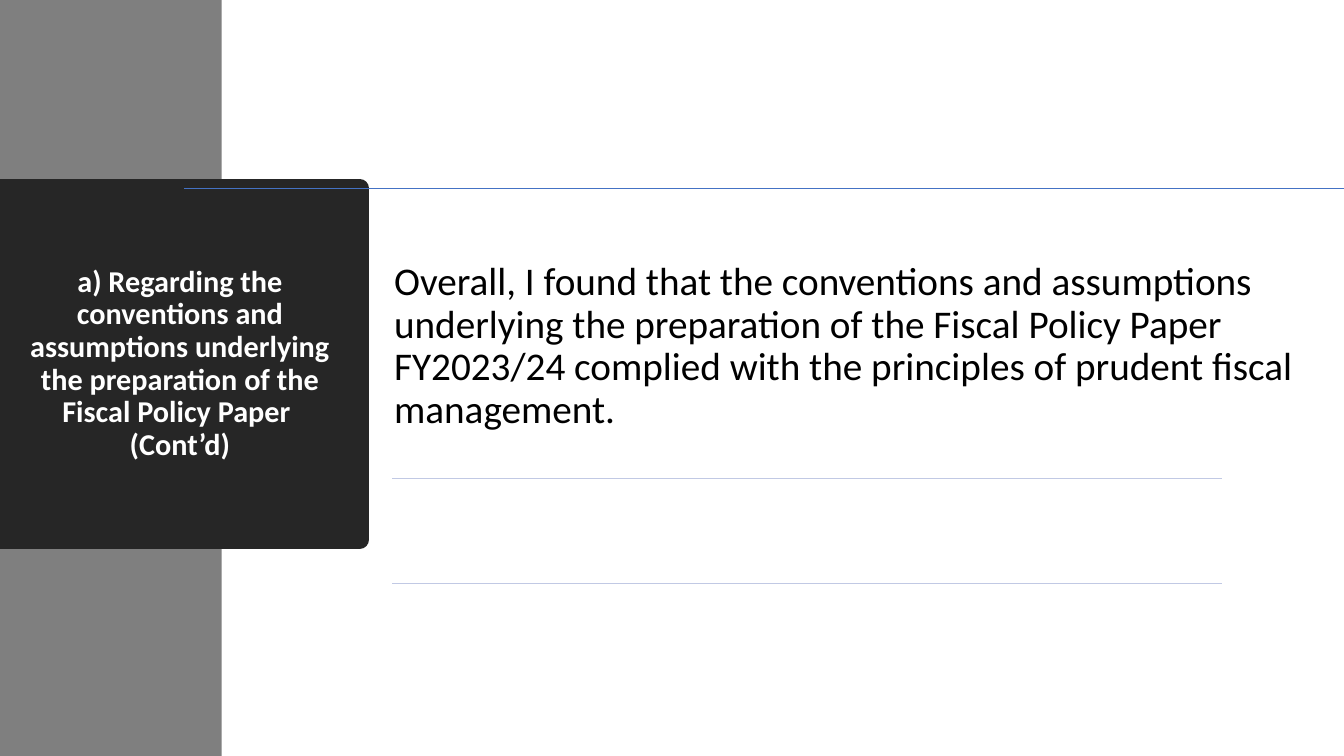
from dataclasses import dataclass

from lxml import etree
from pptx import Presentation
from pptx.dml.color import RGBColor
from pptx.enum.shapes import MSO_CONNECTOR, MSO_SHAPE
from pptx.enum.text import MSO_ANCHOR, PP_ALIGN
from pptx.oxml.ns import qn
from pptx.shapes.autoshape import Shape
from pptx.slide import Slide
from pptx.util import Pt

RECTANGLE = MSO_SHAPE.RECTANGLE
STRAIGHT = MSO_CONNECTOR.STRAIGHT
TOP, MIDDLE = MSO_ANCHOR.TOP, MSO_ANCHOR.MIDDLE
LEFT, CENTER = PP_ALIGN.LEFT, PP_ALIGN.CENTER

PAGE_WIDTH, PAGE_HEIGHT = 960, 540


@dataclass(frozen=True)
class Theme:
    font: str = "Calibri"
    title_size: float = 21.6
    body_size: float = 28
    line_spacing: float = 0.9
    band: str = "7F7F7F"
    panel: str = "262626"
    accent: str = "4472C4"
    pale: str = "C1C9E4"
    title_text: str = "FFFFFF"
    body_text: str = "000000"


@dataclass(frozen=True)
class Area:
    left: float
    top: float
    width: float
    height: float

    def lengths(self) -> tuple[Pt, Pt, Pt, Pt]:
        return Pt(self.left), Pt(self.top), Pt(self.width), Pt(self.height)


@dataclass(frozen=True)
class Rule:
    left: float
    right: float
    height: float
    color: str


@dataclass(frozen=True)
class Passage:
    text: str
    size: float
    color: str
    bold: bool
    align: PP_ALIGN
    anchor: MSO_ANCHOR


THEME = Theme()
BAND = Area(0, 0, 158.4, PAGE_HEIGHT)
PANEL = Area(0, 134.64, 257.04, 250.56)
PANEL_BORDER = 13.75
BODY = Area(272.88, 178.56, 668.16, 200.88)
BODY_INSET = 8.64

RULES = [
    Rule(131.76, PAGE_WIDTH, 134.64, THEME.accent),
    Rule(280.08, 872.64, 342, THEME.pale),
    Rule(280.08, 872.64, 416.88, THEME.pale),
]

TITLE = Passage(
    "a) Regarding the conventions and assumptions underlying "
    "the preparation of the Fiscal Policy Paper \v(Cont’d)",
    THEME.title_size, THEME.title_text, True, CENTER, MIDDLE,
)
FINDING = Passage(
    "Overall, I found that the conventions and assumptions underlying "
    "the preparation of the Fiscal Policy Paper FY2023/24 complied with "
    "the principles of prudent fiscal management.",
    THEME.body_size, THEME.body_text, False, LEFT, TOP,
)


def add_block(page: Slide, area: Area, color: str) -> Shape:
    block = page.shapes.add_shape(RECTANGLE, *area.lengths())
    block.shadow.inherit = False
    block.fill.solid()
    block.fill.fore_color.rgb = RGBColor.from_string(color)
    block.line.fill.background()
    return block


def add_round_border(block: Shape, color: str, width: float) -> None:
    block.line.color.rgb = RGBColor.from_string(color)
    block.line.width = Pt(width)
    etree.SubElement(block.line._get_or_add_ln(), qn("a:round"))


def write(box: Shape, passage: Passage) -> None:
    frame = box.text_frame
    frame.word_wrap = True
    frame.vertical_anchor = passage.anchor
    frame.text = passage.text
    para = frame.paragraphs[0]
    para.alignment = passage.align
    para.line_spacing = THEME.line_spacing
    for span in para.runs:
        span.font.name = THEME.font
        span.font.size = Pt(passage.size)
        span.font.bold = passage.bold
        span.font.color.rgb = RGBColor.from_string(passage.color)


def add_rule(page: Slide, rule: Rule) -> None:
    line = page.shapes.add_connector(
        STRAIGHT, Pt(rule.left), Pt(rule.height), Pt(rule.right), Pt(rule.height)
    )
    line.line.color.rgb = RGBColor.from_string(rule.color)
    line.line.width = Pt(1)
    etree.SubElement(line._element.spPr, qn("a:effectLst"))


def main() -> None:
    deck = Presentation()
    deck.slide_width, deck.slide_height = Pt(PAGE_WIDTH), Pt(PAGE_HEIGHT)
    page = deck.slides.add_slide(deck.slide_layouts[6])

    # Side band and title panel
    add_block(page, BAND, THEME.band)
    panel = add_block(page, PANEL, THEME.panel)
    add_round_border(panel, THEME.panel, PANEL_BORDER)
    write(panel, TITLE)

    # Rules across the content area
    for rule in RULES:
        add_rule(page, rule)

    # Finding
    body = page.shapes.add_textbox(*BODY.lengths())
    frame = body.text_frame
    frame.margin_left = frame.margin_right = Pt(BODY_INSET)
    frame.margin_top = frame.margin_bottom = Pt(BODY_INSET)
    write(body, FINDING)

    deck.save("out.pptx")


if __name__ == "__main__":
    main()
